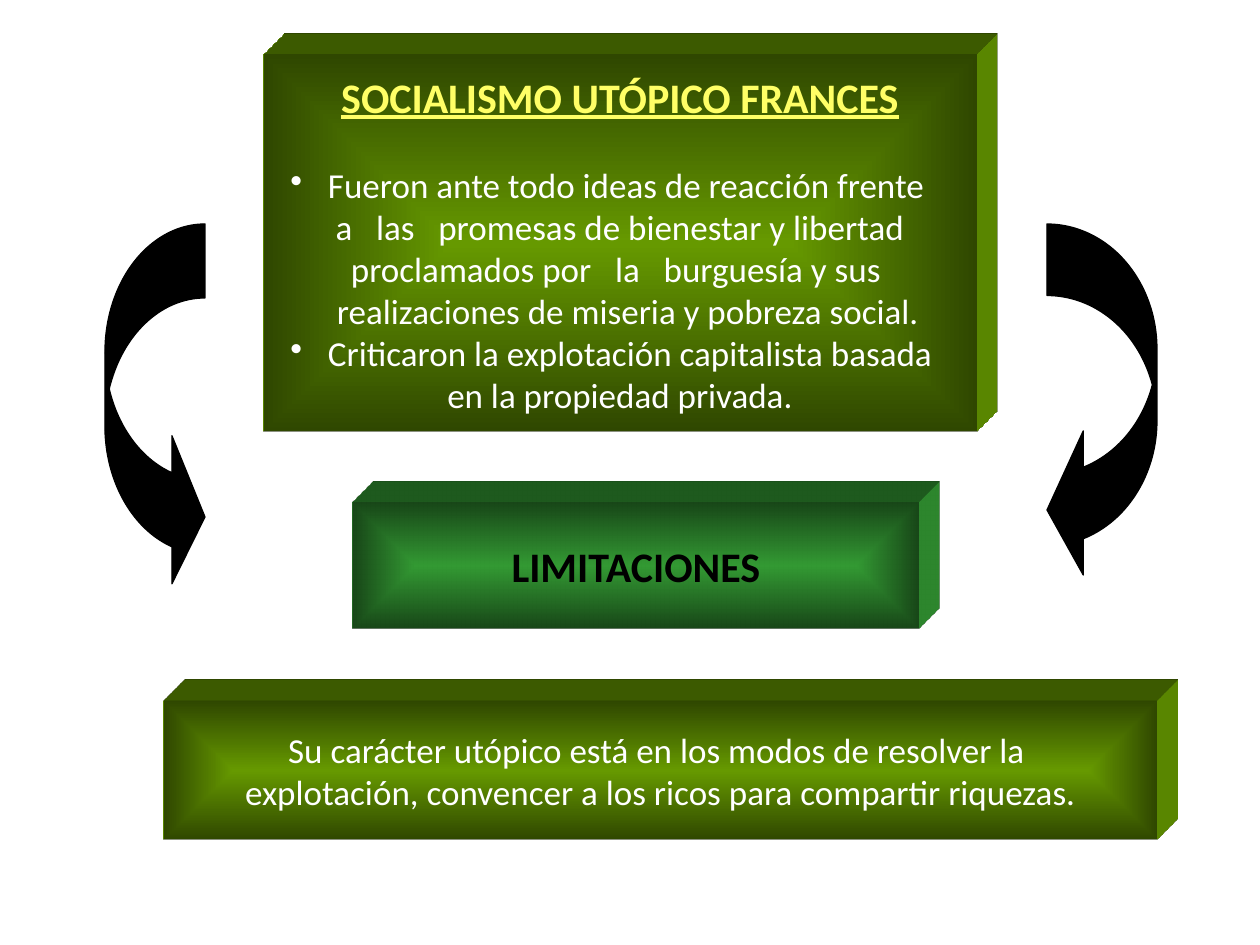
from lxml.etree import SubElement
from pptx import Presentation
from pptx.dml.color import RGBColor
from pptx.enum.shapes import MSO_SHAPE as Shape
from pptx.enum.text import MSO_ANCHOR as Anchor, PP_ALIGN as Align
from pptx.oxml.ns import qn
from pptx.util import Pt

COLORS = {
    "olive": "669900",
    "dark olive": "2F4700",
    "green": "339933",
    "dark green": "184718",
    "yellow": "FFFF66",
    "white": "FFFFFF",
    "black": "000000",
}
OLIVE = ("olive", "dark olive")
GREEN = ("green", "dark green")


def emu(px):
    return round(px * 914400 / 126)


def rgb(name):
    return RGBColor.from_string(COLORS[name])


class Board:
    font = "Calibri"
    body_size = 20
    heading_size = 24
    depth = 430200

    def __init__(self, slide):
        self.slide = slide

    def shape(self, kind, area):
        shape = self.slide.shapes.add_shape(kind, *map(emu, area))
        shape.shadow.inherit = False
        return shape

    def block(self, area, shades):
        block = self.shape(Shape.RECTANGLE, area)
        block.line.fill.background()
        self.shade(block, shades)
        self.extrude(block, shades[0])
        frame = block.text_frame
        frame.word_wrap = False
        frame.vertical_anchor = Anchor.MIDDLE
        return frame

    def shade(self, block, shades):
        block.fill.gradient()
        for stop, position, shade in zip(block.fill.gradient_stops, (0, 1), shades):
            stop.position = position
            stop.color.rgb = rgb(shade)
        gradient = block.element.spPr.find(qn("a:gradFill"))
        gradient.remove(gradient.find(qn("a:lin")))
        path = SubElement(gradient, qn("a:path"), path="shape")
        SubElement(path, qn("a:fillToRect"), dict.fromkeys("ltrb", "50000"))

    def extrude(self, block, color):
        properties = block.element.spPr
        scene = SubElement(properties, qn("a:scene3d"))
        SubElement(scene, qn("a:camera"), prst="legacyObliqueTopRight")
        SubElement(scene, qn("a:lightRig"), rig="legacyFlat3", dir="b")
        solid = SubElement(properties, qn("a:sp3d"),
                           extrusionH=str(self.depth), prstMaterial="legacyMatte")
        side = SubElement(solid, qn("a:extrusionClr"))
        SubElement(side, qn("a:srgbClr"), val=COLORS[color])

    def line(self, frame, text, color, size):
        first = frame.paragraphs[0]
        paragraph = frame.add_paragraph() if first.runs else first
        paragraph.alignment = Align.CENTER
        run = paragraph.add_run()
        run.text = text
        run.font.name = self.font
        run.font.size = Pt(size)
        run.font.color.rgb = rgb(color)
        return paragraph

    def heading(self, frame, text, color, underline=False):
        font = self.line(frame, text, color, self.heading_size).runs[0].font
        font.bold = True
        font.underline = underline

    def body(self, frame, lines, bulleted=False, gap=0):
        for index, text in enumerate(lines):
            paragraph = self.line(frame, text, "white", self.body_size)
            if index == 0:
                paragraph.space_before = Pt(gap)
                if bulleted:
                    properties = paragraph._p.get_or_add_pPr()
                    SubElement(properties, qn("a:buChar"), char="•")

    def arrow(self, kind, area, adjustments):
        arrow = self.shape(kind, area)
        for index, value in enumerate(adjustments):
            arrow.adjustments[index] = value
        arrow.fill.solid()
        arrow.fill.fore_color.rgb = rgb("black")
        arrow.line.color.rgb = rgb("black")
        arrow.line.width = Pt(0.75)


def main():
    deck = Presentation()
    deck.slide_width, deck.slide_height = emu(1260), emu(945)
    board = Board(deck.slides.add_slide(deck.slide_layouts[6]))

    socialism = board.block((263, 55, 714, 377), OLIVE)
    board.heading(socialism, "SOCIALISMO UTÓPICO FRANCES", "yellow", underline=True)
    board.body(socialism, [
        " Fueron ante todo ideas de reacción frente ",
        " a   las   promesas de bienestar y libertad ",
        "proclamados por   la   burguesía y sus ",
        "  realizaciones de miseria y pobreza social.",
    ], bulleted=True, gap=24)
    board.body(socialism, [
        " Criticaron la explotación capitalista basada",
        "en la propiedad privada.",
    ], bulleted=True)

    limitations = board.block((353, 503, 566, 126), GREEN)
    board.heading(limitations, "LIMITACIONES", "black")

    utopian_character = board.block((164, 701, 993, 139), OLIVE)
    board.body(utopian_character, [
        "Su carácter utópico está en los modos de resolver la ",
        "explotación, convencer a los ricos para compartir riquezas.",
    ])

    board.arrow(Shape.CURVED_RIGHT_ARROW, (105, 224, 100, 367), (0.74, 1.48, 0.33))
    board.arrow(Shape.CURVED_LEFT_ARROW, (1047, 224, 110, 358), (0.65, 1.31, 0.33))

    deck.save("out.pptx")


if __name__ == "__main__":
    main()
